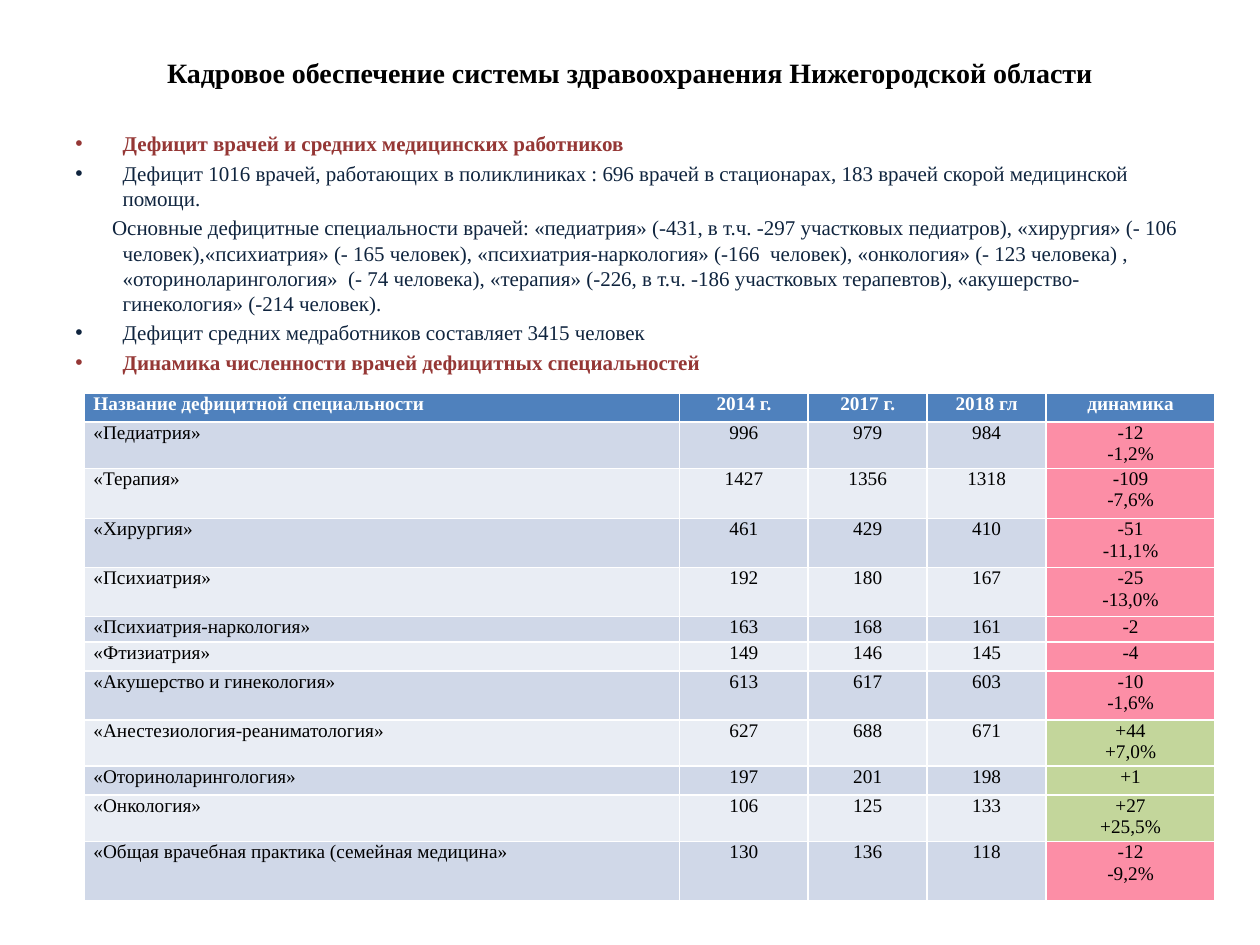
from lxml import etree
from pptx import Presentation
from pptx import util as u
from pptx.dml.color import RGBColor
from pptx.enum import text
from pptx.oxml import ns

BLACK = RGBColor(0x00, 0x00, 0x00)
WHITE = RGBColor(0xFF, 0xFF, 0xFF)
NAVY = RGBColor(0x0F, 0x24, 0x3E)
MAROON = RGBColor(0x95, 0x37, 0x35)
HEADER_BLUE = RGBColor(0x4F, 0x81, 0xBD)
BANDS = (RGBColor(0xD0, 0xD8, 0xE8), RGBColor(0xE9, 0xED, 0xF4))
DECLINE = RGBColor(0xFC, 0x8E, 0xA6)
GROWTH = RGBColor(0xC3, 0xD6, 0x9B)

TITLE = "Кадровое обеспечение системы здравоохранения Нижегородской области"

# (text, is a heading, has a bullet)
STATEMENTS = [
    ("Дефицит врачей и средних медицинских работников", True, True),
    ("Дефицит 1016 врачей, работающих в поликлиниках : 696 врачей в стационарах, "
     "183 врачей скорой медицинской помощи.", False, True),
    ("Основные дефицитные специальности врачей: «педиатрия» (-431, в т.ч. -297 участковых "
     "педиатров), «хирургия» (- 106 человек),«психиатрия» (- 165 человек), "
     "«психиатрия-наркология» (-166  человек), «онкология» (- 123 человека) , "
     "«оториноларингология»  (- 74 человека), «терапия» (-226, в т.ч. -186 участковых "
     "терапевтов), «акушерство-гинекология» (-214 человек).", False, False),
    ("Дефицит средних медработников составляет 3415 человек", False, True),
    ("Динамика численности врачей дефицитных специальностей", True, True),
]

COLUMN_WIDTHS = [340, 73.5, 68, 68, 96.5]
HEADER = ["Название дефицитной специальности", "2014 г.", "2017 г.", "2018 гл", "динамика"]
HEADER_HEIGHT = 16.6
# (row height, cells)
SPECIALTIES = [
    (25.9, ["«Педиатрия»", "996", "979", "984", "-12\n-1,2%"]),
    (28.8, ["«Терапия»", "1427", "1356", "1318", "-109\n-7,6%"]),
    (28, ["«Хирургия»", "461", "429", "410", "-51\n-11,1%"]),
    (28, ["«Психиатрия»", "192", "180", "167", "-25\n-13,0%"]),
    (14.4, ["«Психиатрия-наркология»", "163", "168", "161", "-2"]),
    (16.6, ["«Фтизиатрия»", "149", "146", "145", "-4"]),
    (28, ["«Акушерство и гинекология»", "613", "617", "603", "-10\n-1,6%"]),
    (25.9, ["«Анестезиология-реаниматология»", "627", "688", "671", "+44\n+7,0%"]),
    (16.6, ["«Оториноларингология»", "197", "201", "198", "+1"]),
    (25.9, ["«Онкология»", "106", "125", "133", "+27\n+25,5%"]),
    (33.8, ["«Общая врачебная практика (семейная медицина»", "130", "136", "118",
            "-12\n-9,2%"]),
]


class SlideBuilder:
    font_name = "Times New Roman"
    bullet_indent = 27
    plain_indent = 6

    def __init__(self, slide):
        self.slide = slide

    def style(self, paragraph, size, color, bold=False, align=text.PP_ALIGN.LEFT):
        paragraph.alignment = align
        for run in paragraph.runs:
            run.font.name = self.font_name
            run.font.size = u.Pt(size)
            run.font.bold = bold
            run.font.color.rgb = color

    def text_box(self, left, top, width, height):
        box = self.slide.shapes.add_textbox(*map(u.Pt, (left, top, width, height)))
        box.text_frame.word_wrap = True
        return box.text_frame

    def title(self, wording, left, top, width, height):
        frame = self.text_box(left, top, width, height)
        frame.vertical_anchor = text.MSO_ANCHOR.MIDDLE
        frame.text = wording
        self.style(frame.paragraphs[0], 16, BLACK, True, text.PP_ALIGN.CENTER)

    def hang(self, paragraph, bulleted):
        """Set the hanging indent and, where wanted, the bullet."""
        properties = paragraph._p.get_or_add_pPr()
        first_line = self.bullet_indent if bulleted else self.plain_indent
        properties.set("marL", str(u.Pt(self.bullet_indent)))
        properties.set("indent", str(-u.Pt(first_line)))
        if bulleted:
            font = etree.SubElement(properties, ns.qn("a:buFont"))
            font.set("typeface", "Arial")
            etree.SubElement(properties, ns.qn("a:buChar")).set("char", "•")

    def statements(self, items, left, top, width, height):
        frame = self.text_box(left, top, width, height)
        frame.text = "\n".join(wording for wording, _, _ in items)
        for paragraph, (_, heading, bulleted) in zip(frame.paragraphs, items):
            paragraph.space_before = u.Pt(2.4)
            self.style(paragraph, 12, MAROON if heading else NAVY, heading)
            self.hang(paragraph, bulleted)

    def cell(self, cell, wording, fill, color, bold, align):
        cell.margin_left = cell.margin_right = u.Pt(5)
        cell.margin_top = cell.margin_bottom = u.Pt(0)
        cell.fill.solid()
        cell.fill.fore_color.rgb = fill
        cell.text_frame.text = wording
        for paragraph in cell.text_frame.paragraphs:
            self.style(paragraph, 11, color, bold, align)

    def table(self, header, rows, widths, left, top):
        rows = [(HEADER_HEIGHT, header)] + rows
        total_height = sum(height for height, _ in rows)
        frame = self.slide.shapes.add_table(
            len(rows), len(widths), *map(u.Pt, (left, top, sum(widths), total_height)))
        table = frame.table
        for column, width in zip(table.columns, widths):
            column.width = u.Pt(width)
        last = len(widths) - 1
        for i, (height, values) in enumerate(rows):
            table.rows[i].height = u.Pt(height)
            for j, value in enumerate(values):
                if i == 0:
                    fill = HEADER_BLUE
                elif j == last:
                    fill = GROWTH if value.startswith("+") else DECLINE
                else:
                    fill = BANDS[(i - 1) % 2]
                align = text.PP_ALIGN.CENTER if j else text.PP_ALIGN.JUSTIFY
                self.cell(table.cell(i, j), value, fill,
                          BLACK if i else WHITE, i == 0, align)


def main():
    presentation = Presentation()
    presentation.slide_width, presentation.slide_height = u.Pt(720), u.Pt(540)
    slide = presentation.slides.add_slide(presentation.slide_layouts[6])
    builder = SlideBuilder(slide)
    builder.title(TITLE, 36, 21.6, 648, 39)
    builder.statements(STATEMENTS, 36, 71.3, 648, 411)
    builder.table(HEADER, SPECIALTIES, COLUMN_WIDTHS, 48.4, 224.6)
    presentation.save("out.pptx")


if __name__ == "__main__":
    main()
